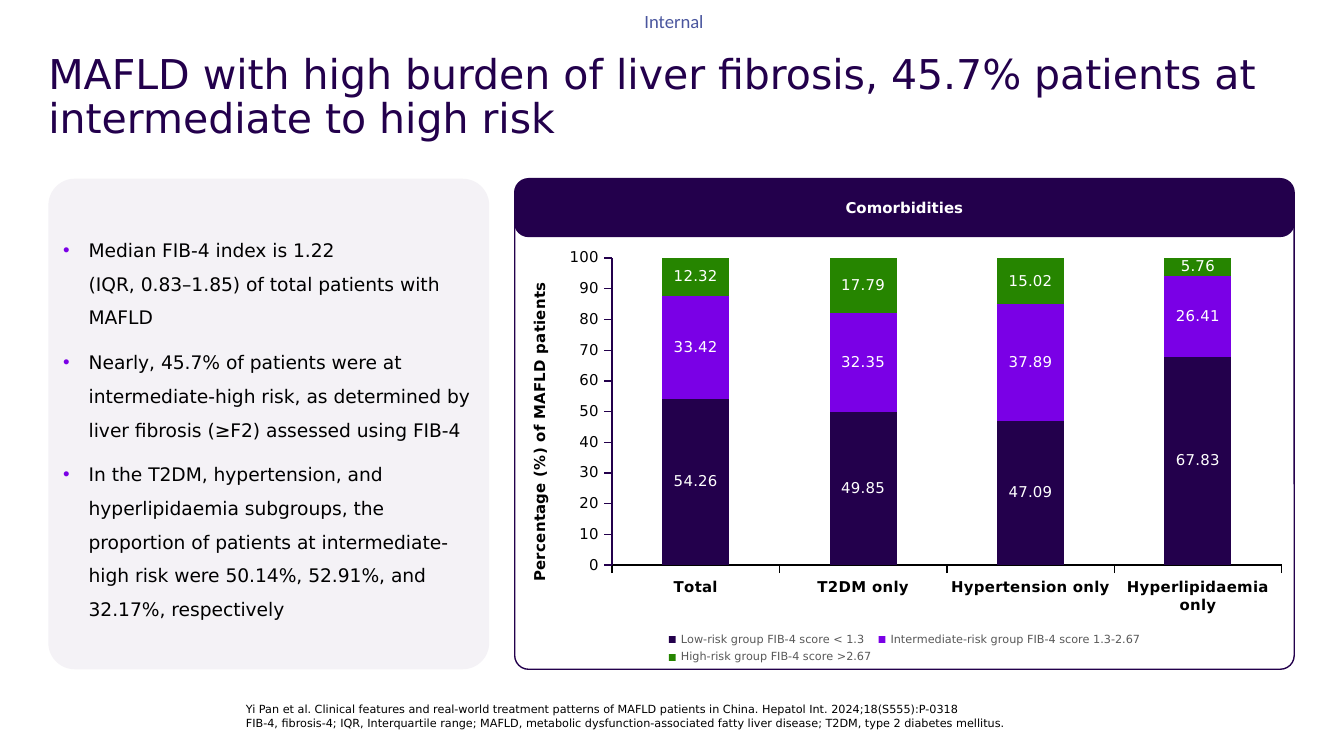
from typing import NamedTuple

from lxml import etree
from pptx import Presentation
from pptx.chart.data import CategoryChartData
from pptx.dml.color import RGBColor
from pptx.enum.chart import XL_CHART_TYPE, XL_LABEL_POSITION, XL_LEGEND_POSITION, XL_TICK_MARK
from pptx.enum.shapes import MSO_SHAPE
from pptx.enum.text import MSO_ANCHOR, MSO_AUTO_SIZE, PP_ALIGN
from pptx.oxml import parse_xml
from pptx.oxml.ns import qn
from pptx.util import Inches, Pt

STACKED = XL_CHART_TYPE.COLUMN_STACKED
ROUND = MSO_SHAPE.ROUNDED_RECTANGLE
LEFT, CENTER = PP_ALIGN.LEFT, PP_ALIGN.CENTER
TOP, MIDDLE, BOTTOM = MSO_ANCHOR.TOP, MSO_ANCHOR.MIDDLE, MSO_ANCHOR.BOTTOM
LABEL_CENTER = XL_LABEL_POSITION.CENTER
LEGEND_BOTTOM = XL_LEGEND_POSITION.BOTTOM
OUTSIDE = XL_TICK_MARK.OUTSIDE

WIDTH, HEIGHT = Inches(10), Inches(5.625)
FONT = "DejaVu Sans"
NAVY, VIOLET, GREEN = "23004C", "7A00E6", "268500"
PALE, GREY, BLUE, BLACK, WHITE = "F4F2F6", "595959", "4A569E", "000000", "FFFFFF"


class Box(NamedTuple):
    """Place on the slide, in percent of its width and height."""
    left: float
    top: float
    width: float
    height: float

    def emu(self) -> list[int]:
        """Return left, top, width and height in EMU."""
        return [int(v * side / 100) for v, side in zip(self, (WIDTH, HEIGHT) * 2)]


class Card(NamedTuple):
    """Rounded rectangle with its corner share and colours."""
    box: Box
    corner: float
    fill: str | None = None
    line: str | None = None


class Series(NamedTuple):
    """One risk group of the stacked chart."""
    name: str
    color: str
    values: tuple[float, ...]


CARD_TOP, CARD_BOTTOM = 23.64, 88.53
LIST_LEFT, LIST_WIDTH = 3.6, 32.8
CHART_LEFT, CHART_WIDTH = 38.3, 58


def card_box(left: float, width: float, top: float = CARD_TOP) -> Box:
    """Return a box that ends on the common bottom line of the cards."""
    return Box(left, top, width, CARD_BOTTOM - top)


TAG_BOX = Box(47.8, 1.24, 4.7, 3.02)
TITLE_BOX = Box(3.6, 7.11, 92.8, 14.04)
SOURCE_BOX = Box(18.3, 90.13, 70.3, 6.4)
LIST_BOX = card_box(LIST_LEFT, LIST_WIDTH)
CHART_BOX = card_box(CHART_LEFT, CHART_WIDTH, 31.47)
FRAME = Card(card_box(CHART_LEFT, CHART_WIDTH, 27.56), 0.03, line=NAVY)
PANEL = Card(LIST_BOX, 0.06, fill=PALE)
HEADER = Card(Box(CHART_LEFT, CARD_TOP, CHART_WIDTH, 7.64), 0.24, NAVY, NAVY)
PLOT = {"x": 0.125, "y": 0.047, "w": 0.859, "h": 0.712}

TITLE = "MAFLD with high burden of liver fibrosis, 45.7% patients at intermediate to high risk"
FINDINGS = (
    "Median FIB-4 index is 1.22 \v(IQR, 0.83–1.85) of total patients with MAFLD",
    "Nearly, 45.7% of patients were at intermediate-high risk, as determined by "
    "liver fibrosis (≥F2) assessed using FIB-4",
    "In the T2DM, hypertension, and hyperlipidaemia subgroups, the proportion of patients at "
    "intermediate- high risk were 50.14%, 52.91%, and 32.17%, respectively",
)
SOURCES = (
    "Yi Pan et al. Clinical features and real-world treatment patterns of MAFLD patients in China. "
    "Hepatol Int. 2024;18(S555):P-0318",
    "FIB-4, fibrosis-4; IQR, Interquartile range; MAFLD, metabolic dysfunction-associated "
    "fatty liver disease; T2DM, type 2 diabetes mellitus.",
)
GROUPS = ("Total", "T2DM only", "Hypertension only", "Hyperlipidaemia only")
SERIES = (
    Series("Low-risk group FIB-4 score < 1.3", NAVY, (54.26, 49.85, 47.09, 67.83)),
    Series("Intermediate-risk group FIB-4 score 1.3-2.67", VIOLET, (33.42, 32.35, 37.89, 26.41)),
    Series("High-risk group FIB-4 score >2.67", GREEN, (12.32, 17.79, 15.02, 5.76)),
)


def rgb(color: str) -> RGBColor:
    """Turn a hex string into a colour."""
    return RGBColor.from_string(color)


def style(font, size: float, color: str, bold: bool = False, name: str = FONT) -> None:
    """Set the look of a font."""
    font.size, font.bold, font.name = Pt(size), bold, name
    font.color.rgb = rgb(color)


def add_bullet(p, color: str, indent: float) -> None:
    """Give a paragraph a coloured bullet and a hanging indent."""
    pPr = p._p.get_or_add_pPr()
    pPr.set("marL", str(Inches(indent)))
    pPr.set("indent", str(-Inches(indent)))
    tint = etree.SubElement(pPr, qn("a:buClr"))
    etree.SubElement(tint, qn("a:srgbClr"), val=color)
    etree.SubElement(pPr, qn("a:buChar"), char="•")


def write(s, *lines: str, size: float, color: str = BLACK, bold: bool = False, name: str = FONT,
          align=LEFT, anchor=TOP, margins: tuple[float, float] = (0, 0), wrap: bool = True,
          spacing: float = 1, after: float = 0, bullet: str | None = None) -> None:
    """Fill a shape with one paragraph per line."""
    tf = s.text_frame
    tf.word_wrap, tf.auto_size, tf.vertical_anchor = wrap, MSO_AUTO_SIZE.NONE, anchor
    tf.margin_left = tf.margin_right = Inches(margins[0])
    tf.margin_top = tf.margin_bottom = Inches(margins[1])
    for i, line in enumerate(lines):
        p = tf.add_paragraph() if i else tf.paragraphs[0]
        p.text = line
        if bullet:
            add_bullet(p, bullet, 0.19)
        p.alignment, p.line_spacing = align, spacing
        p.space_before, p.space_after = Pt(0), Pt(after)
        for r in p.runs:
            style(r.font, size, color, bold, name)


def place(s, box: Box):
    """Move a shape to its box."""
    s.left, s.top, s.width, s.height = box.emu()
    return s


def draw_card(slide, card: Card):
    """Draw a rounded rectangle."""
    s = slide.shapes.add_shape(ROUND, *card.box.emu())
    s.adjustments[0] = card.corner
    s.shadow.inherit = False
    for fill, color in ((s.fill, card.fill), (s.line.fill, card.line)):
        if color:
            fill.solid()
            fill.fore_color.rgb = rgb(color)
        else:
            fill.background()
    if card.line:
        s.line.width = Pt(0.75)
    return s


def format_axis(axis, line: str, bold: bool = False) -> None:
    """Set the line, ticks and labels of an axis."""
    axis.has_major_gridlines = False
    axis.major_tick_mark = OUTSIDE
    axis.format.line.color.rgb = rgb(line)
    axis.format.line.width = Pt(0.75)
    style(axis.tick_labels.font, 8, BLACK, bold)


def fix_plot_area(chart) -> None:
    """Pin the inner plot area to its share of the chart."""
    area = chart._chartSpace.chart.plotArea
    for old in area.findall(qn("c:layout")):
        area.remove(old)
    modes = "".join(f'<c:{k}Mode val="edge"/>' for k in "xy")
    sizes = "".join(f'<c:{k} val="{v}"/>' for k, v in PLOT.items())
    ns = "http://schemas.openxmlformats.org/drawingml/2006/chart"
    area.insert(0, parse_xml(
        f'<c:layout xmlns:c="{ns}"><c:manualLayout><c:layoutTarget val="inner"/>'
        f"{modes}{sizes}</c:manualLayout></c:layout>"))


def draw_chart(slide) -> None:
    """Draw the stacked columns of risk groups."""
    data = CategoryChartData()
    data.categories = GROUPS
    for item in SERIES:
        data.add_series(item.name, item.values)
    chart = slide.shapes.add_chart(STACKED, *CHART_BOX.emu(), data).chart
    style(chart.font, 8, BLACK)
    chart.has_title = False
    chart.has_legend = True
    chart.legend.position, chart.legend.include_in_layout = LEGEND_BOTTOM, False
    style(chart.legend.font, 6, GREY)
    format_axis(chart.category_axis, BLACK, bold=True)
    axis = chart.value_axis
    format_axis(axis, NAVY)
    axis.minimum_scale, axis.maximum_scale, axis.major_unit = 0, 100, 10
    write_title = axis.axis_title.text_frame.paragraphs[0].add_run()
    write_title.text = "Percentage (%) of MAFLD patients"
    style(write_title.font, 8, BLACK, bold=True)
    plot = chart.plots[0]
    plot.gap_width, plot.overlap, plot.vary_by_categories = 150, 100, False
    for series, item in zip(plot.series, SERIES):
        series.format.fill.solid()
        series.format.fill.fore_color.rgb = rgb(item.color)
        labels = series.data_labels
        labels.show_value, labels.position = True, LABEL_CENTER
        style(labels.font, 8, WHITE)
    fix_plot_area(chart)


def main() -> None:
    """Build the slide and save it."""
    prs = Presentation()
    prs.slide_width, prs.slide_height = WIDTH, HEIGHT
    slide = prs.slides.add_slide(prs.slide_layouts[1])
    title, body = slide.placeholders
    draw_card(slide, FRAME)
    draw_chart(slide)
    panel = draw_card(slide, PANEL)
    slide.shapes._spTree.remove(panel._element)
    slide.shapes._spTree.insert(2, panel._element)
    write(draw_card(slide, HEADER), "Comorbidities", size=8, color=WHITE, bold=True,
          align=CENTER, anchor=MIDDLE, margins=(0.04, 0.04))
    write(place(title, TITLE_BOX), TITLE, size=22, color=NAVY, spacing=0.9)
    write(place(body, LIST_BOX), *FINDINGS, size=10, anchor=MIDDLE, margins=(0.11, 0.11),
          spacing=1.5, after=6, bullet=VIOLET)
    write(slide.shapes.add_textbox(*TAG_BOX.emu()), "Internal", size=10, color=BLUE,
          name="Calibri", align=CENTER, wrap=False)
    write(slide.shapes.add_textbox(*SOURCE_BOX.emu()), *SOURCES, size=6, anchor=BOTTOM)
    prs.save("out.pptx")


if __name__ == "__main__":
    main()
